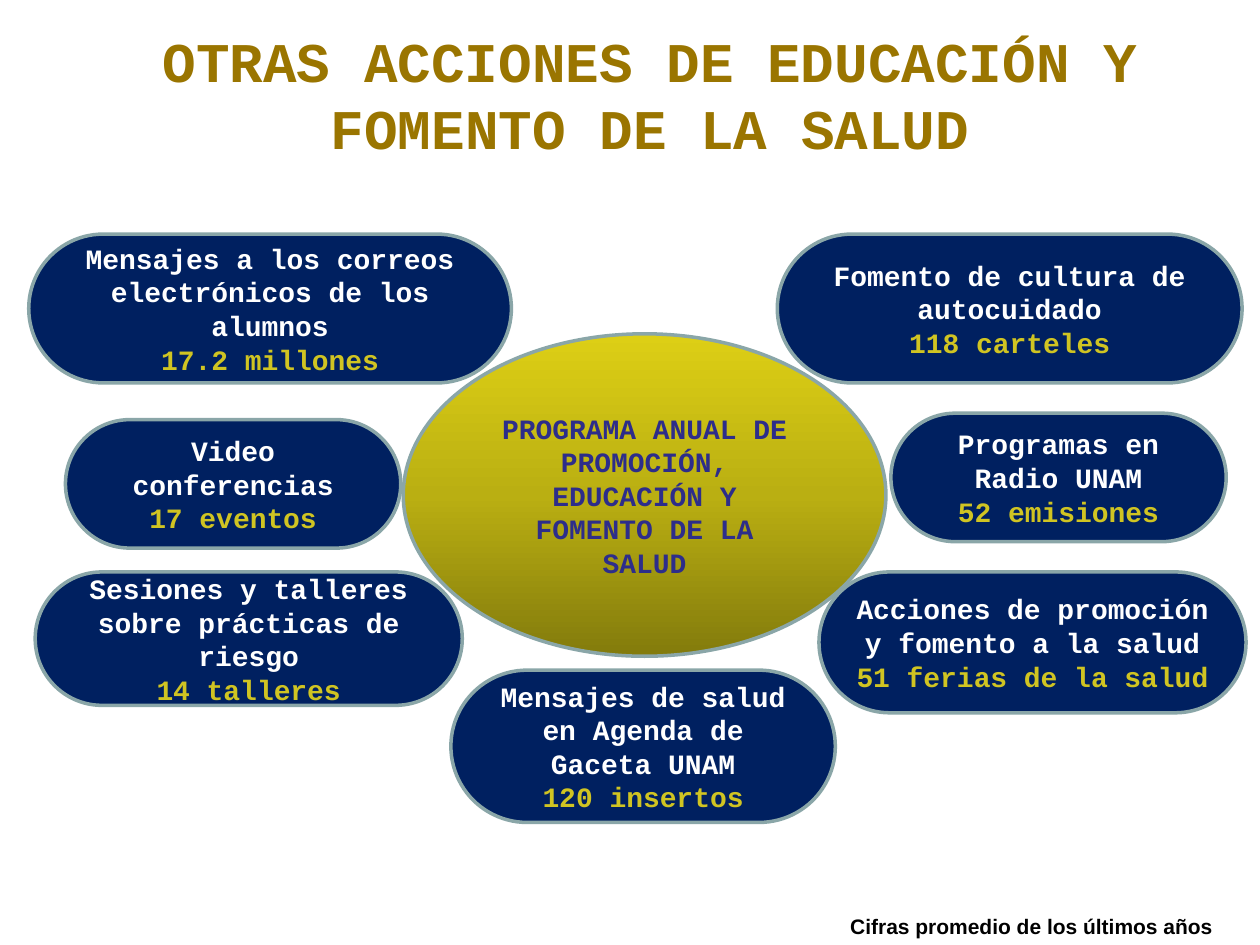
from copy import deepcopy

from pptx import Presentation
from pptx.dml.color import RGBColor
from pptx.enum.shapes import MSO_SHAPE
from pptx.enum.text import MSO_ANCHOR, MSO_AUTO_SIZE, PP_ALIGN
from pptx.oxml.ns import qn
from pptx.util import Cm, Pt

NAVY = RGBColor(0x00, 0x20, 0x60)
GREY_GREEN = RGBColor(0x8A, 0xA6, 0xA8)
WHITE = RGBColor(0xFF, 0xFF, 0xFF)
BLACK = RGBColor(0x00, 0x00, 0x00)
YELLOW = RGBColor(0xD0, 0xC4, 0x22)
GOLD = RGBColor(0x9A, 0x75, 0x00)
INDIGO = RGBColor(0x2D, 0x2D, 0x8A)
ELLIPSE_STOPS = (
    (0, RGBColor(0x83, 0x7B, 0x0C)),
    (0.5, RGBColor(0xBA, 0xAF, 0x12)),
    (1, RGBColor(0xDD, 0xCF, 0x15)),
)

# Left, top, width, height in cm; action; yearly figure
OUTER_ACTIONS = (
    (15.67, 4.72, 9.37, 3.0, "Fomento de cultura de autocuidado", "118 carteles"),
    (16.51, 11.53, 8.61, 2.84, "Acciones de promoción y fomento a la salud",
     "51 ferias de la salud"),
    (0.58, 4.72, 9.73, 3.0, "Mensajes a los correos electrónicos de los alumnos",
     "17.2 millones"),
    (0.71, 11.53, 8.61, 2.69, "Sesiones y talleres sobre prácticas de riesgo",
     "14 talleres"),
)
INNER_ACTIONS = (
    (17.96, 8.33, 6.76, 2.59, "Programas en Radio UNAM", "52 emisiones"),
    (1.32, 8.46, 6.76, 2.59, "Video conferencias", "17 eventos"),
    (9.09, 13.51, 7.75, 3.07, "Mensajes de salud en Agenda de Gaceta UNAM",
     "120 insertos"),
)


def write_paragraph(paragraph, text, color, size=16, name="Courier New",
                    alignment=PP_ALIGN.CENTER):
    paragraph.text = text
    paragraph.alignment = alignment
    font = paragraph.font
    font.name, font.size, font.bold = name, Pt(size), True
    font.color.rgb = color


def add_outlined_shape(slide, kind, left, top, width, height):
    shape = slide.shapes.add_shape(kind, Cm(left), Cm(top), Cm(width), Cm(height))
    shape.shadow.inherit = False
    shape.line.color.rgb = GREY_GREEN
    shape.line.width = Pt(2)
    shape.text_frame.word_wrap = True
    shape.text_frame.vertical_anchor = MSO_ANCHOR.MIDDLE
    return shape


def add_action(slide, left, top, width, height, action, figure):
    shape = add_outlined_shape(slide, MSO_SHAPE.ROUNDED_RECTANGLE,
                               left, top, width, height)
    shape.adjustments[0] = 0.5
    shape.fill.solid()
    shape.fill.fore_color.rgb = NAVY
    frame = shape.text_frame
    write_paragraph(frame.paragraphs[0], action, WHITE)
    write_paragraph(frame.add_paragraph(), figure, YELLOW)


def add_program(slide):
    shape = add_outlined_shape(slide, MSO_SHAPE.OVAL, 8.13, 6.73, 9.73, 6.5)
    shape.fill.gradient()
    shape.fill.gradient_angle = 90
    # The default gradient has two stops; a third is needed
    stop_list = shape._element.spPr.find(qn("a:gradFill")).find(qn("a:gsLst"))
    stop_list.append(deepcopy(stop_list[-1]))
    for stop, (position, color) in zip(shape.fill.gradient_stops, ELLIPSE_STOPS):
        stop.position = position
        stop.color.rgb = color
    write_paragraph(shape.text_frame.paragraphs[0],
                    "PROGRAMA ANUAL DE PROMOCIÓN, EDUCACIÓN Y FOMENTO DE LA SALUD",
                    INDIGO)


def set_title(slide):
    title = slide.shapes.title
    title.left, title.top, title.width, title.height = (
        Cm(1.4), Cm(0.41), Cm(23.42), Cm(3))
    frame = title.text_frame
    frame.word_wrap = True
    frame.auto_size = MSO_AUTO_SIZE.NONE
    frame.vertical_anchor = MSO_ANCHOR.TOP
    write_paragraph(frame.paragraphs[0],
                    "OTRAS ACCIONES DE EDUCACIÓN Y FOMENTO DE LA SALUD", GOLD, 32)


def add_note(slide):
    box = slide.shapes.add_textbox(Cm(16.89), Cm(18.29), Cm(7.92), Cm(0.76))
    box.text_frame.word_wrap = True
    write_paragraph(box.text_frame.paragraphs[0],
                    "Cifras promedio de los últimos años", BLACK, 12, "Arial",
                    PP_ALIGN.LEFT)


def main():
    presentation = Presentation()
    presentation.slide_width, presentation.slide_height = Cm(25.4), Cm(19.05)
    slide = presentation.slides.add_slide(presentation.slide_layouts[5])

    set_title(slide)
    # The central ellipse overlaps the outer actions
    for action in OUTER_ACTIONS:
        add_action(slide, *action)
    add_program(slide)
    for action in INNER_ACTIONS:
        add_action(slide, *action)
    add_note(slide)

    presentation.save("out.pptx")


if __name__ == "__main__":
    main()
